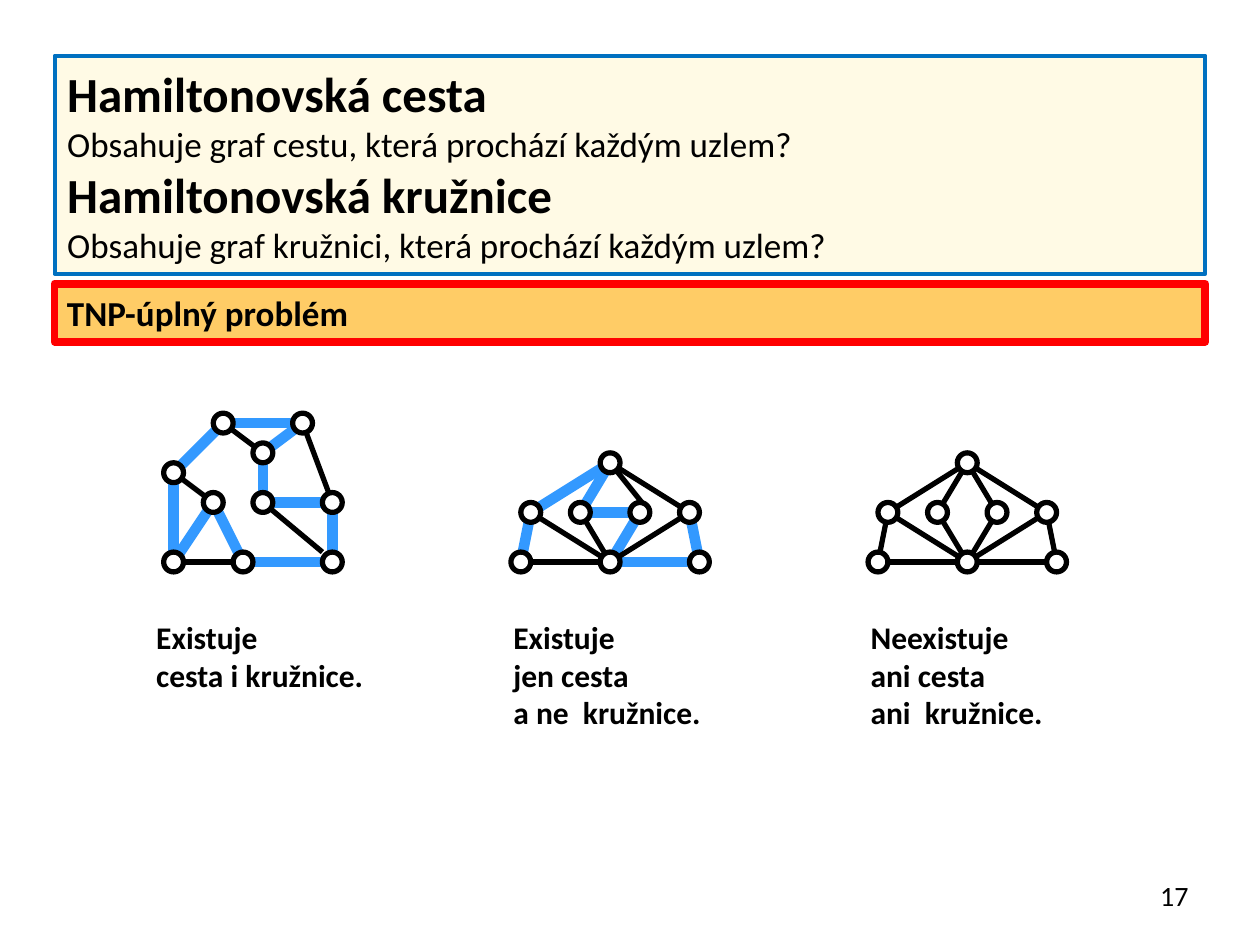
from lxml.etree import SubElement
from pptx import Presentation
from pptx.dml.color import RGBColor
from pptx.enum.shapes import MSO_CONNECTOR as CONN, MSO_SHAPE as SHP
from pptx.enum.text import MSO_ANCHOR as ANCHOR, MSO_AUTO_SIZE as FIT, PP_ALIGN as ALIGN
from pptx.oxml.ns import qn
from pptx.util import Cm, Pt

COLORS = {
    "ink": "000000", "white": "FFFFFF", "path": "3399FF", "cream": "FFFAE5",
    "blue": "0070C0", "amber": "FFCC66", "red": "FF0000",
}
STEP = 0.2

MAZE_NODES = {
    "a": (0, 0), "b": (7, 0), "c": (16, 0), "d": (4, -6), "e": (9, -6),
    "f": (16, -6), "g": (0, -9), "h": (9, -11), "i": (5, -14), "j": (13, -14),
}
MAZE_JOINTS = {"x": (15, -1)}
MAZE_THIN = "ex ba hi fj dg"
MAZE_PATH = "fe fc cb bd da ag gi ij jh he"

FAN_NODES = {
    "a": (0, 0), "m": (9, 0), "r": (18, 0), "l": (1, -5), "p": (6, -5),
    "q": (12, -5), "s": (17, -5), "t": (9, -10),
}
FAN_JOINTS = {"x": (13, -5)}
FAN_THIN = "xt mp sm ml st ma"
FAN_PATH = "qp qm tp tl rm rs al"
FAN_ALL = "qm tp qt mp sm ml tl st rm rs ma al"

COLUMNS = [
    (0.6, MAZE_NODES, MAZE_JOINTS, MAZE_THIN, MAZE_PATH,
     ["Existuje", "cesta i kružnice."]),
    (0.4, FAN_NODES, FAN_JOINTS, FAN_THIN, FAN_PATH,
     ["Existuje", "jen cesta", "a ne  kružnice."]),
    (0.4, FAN_NODES, {}, FAN_ALL, "",
     ["Neexistuje", "ani cesta", "ani  kružnice."]),
]


def rgb(name):
    return RGBColor.from_string(COLORS[name])


def place(sp, x, y, w, h):
    sp.left, sp.top, sp.width, sp.height = Cm(x), Cm(y), Cm(w), Cm(h)


def paint(sp, fill, line, width):
    sp.fill.solid()
    sp.fill.fore_color.rgb = rgb(fill)
    sp.line.color.rgb = rgb(line)
    sp.line.width = Pt(width)


def write(tf, lines, anchor=ANCHOR.MIDDLE, align=ALIGN.LEFT):
    tf.vertical_anchor = anchor
    for n, (text, size, bold) in enumerate(lines):
        p = tf.paragraphs[0] if n == 0 else tf.add_paragraph()
        p.alignment = align
        r = p.add_run()
        r.text = text
        r.font.name = "Calibri"
        r.font.size = Pt(size)
        r.font.bold = bold
        r.font.color.rgb = rgb("ink")


def add_heading(s, x, y, w, h):
    sp = s.shapes.title
    place(sp, x, y, w, h)
    paint(sp, "cream", "blue", 2.25)
    sp.text_frame.auto_size = FIT.NONE
    write(sp.text_frame, [
        ("Hamiltonovská cesta", 28, True),
        ("Obsahuje graf cestu, která prochází každým uzlem?", 20, False),
        ("Hamiltonovská kružnice", 28, True),
        ("Obsahuje graf kružnici, která prochází každým uzlem?", 20, False),
    ])


def add_banner(s, x, y, w, h):
    sp = s.shapes.add_shape(SHP.RECTANGLE, Cm(x), Cm(y), Cm(w), Cm(h))
    sp.shadow.inherit = False
    paint(sp, "amber", "red", 4.5)
    write(sp.text_frame, [("TNP-úplný problém", 20, True)])


def add_edge(s, start, end, color, width):
    ends = [Cm(v) for v in (*start, *end)]
    c = s.shapes.add_connector(CONN.STRAIGHT, *ends)
    c.line.color.rgb = rgb(color)
    c.line.width = Pt(width)
    SubElement(c._element.spPr, qn("a:effectLst"))


def add_graph(s, x, y, nodes, joints, thin, path):
    points = {k: (x + u * STEP, y + v * STEP)
              for k, (u, v) in {**nodes, **joints}.items()}
    for edges, color, width in ((path, "path", 6), (thin, "ink", 3)):
        for a, b in edges.split():
            add_edge(s, points[a], points[b], color, width)
    for k in nodes:
        cx, cy = points[k]
        sp = s.shapes.add_shape(SHP.OVAL, Cm(cx - STEP), Cm(cy - STEP),
                                Cm(2 * STEP), Cm(2 * STEP))
        sp.shadow.inherit = False
        paint(sp, "white", "ink", 3)


def add_column(s, x, y, inset, nodes, joints, thin, path, caption):
    add_graph(s, x + inset, y, nodes, joints, thin, path)
    sp = s.shapes.add_textbox(Cm(x), Cm(y + 1), Cm(4.8), Cm(0.26 + 0.77 * len(caption)))
    sp.text_frame.word_wrap = False
    write(sp.text_frame, [(t, 18, True) for t in caption], ANCHOR.TOP)


def add_page_number(s, x, y, w, h):
    sp = s.shapes.add_textbox(Cm(x), Cm(y), Cm(w), Cm(h))
    sp.text_frame.word_wrap = True
    write(sp.text_frame, [("17", 16, False)], align=ALIGN.RIGHT)


def main():
    prs = Presentation()
    prs.slide_width, prs.slide_height = Cm(25.4), Cm(19.05)
    s = prs.slides.add_slide(prs.slide_layouts[5])
    add_heading(s, 1.1, 1.12, 23.2, 4.4)
    add_banner(s, 1.1, 5.72, 23.2, 1.17)
    for n, column in enumerate(COLUMNS):
        add_column(s, 2.9 + 7.2 * n, 11.33, *column)
    add_page_number(s, 18.29, 17.53, 5.92, 1.02)
    prs.save("out.pptx")


if __name__ == "__main__":
    main()
